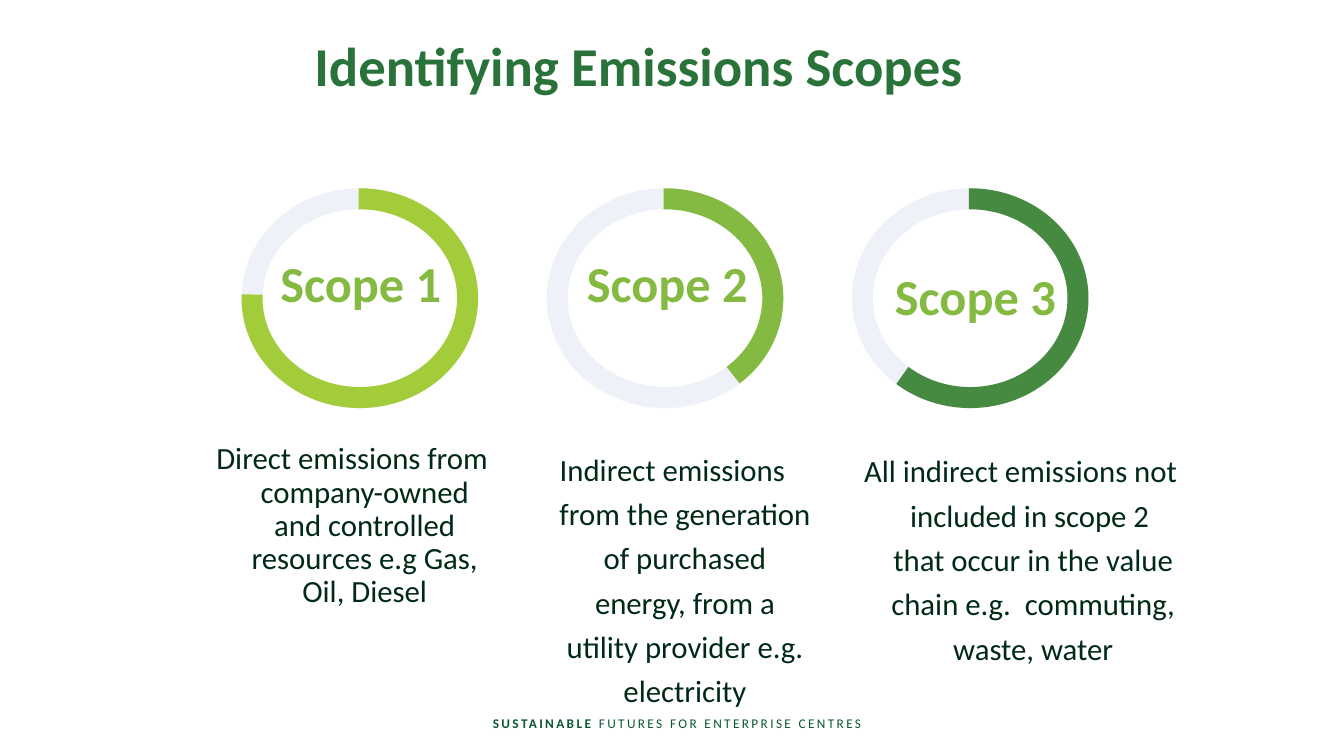
from dataclasses import dataclass

from pptx import Presentation
from pptx.dml.color import RGBColor
from pptx.enum.shapes import MSO_SHAPE
from pptx.enum.text import MSO_ANCHOR, PP_ALIGN
from pptx.shapes.autoshape import Shape
from pptx.slide import Slide
from pptx.util import Pt

WHITE = RGBColor(0xFF, 0xFF, 0xFF)
TRACK = RGBColor(0xEF, 0xF1, 0xF8)
LIME = RGBColor(0xA2, 0xCC, 0x3A)
LEAF = RGBColor(0x84, 0xBA, 0x41)
FOREST = RGBColor(0x46, 0x89, 0x40)
TITLE_GREEN = RGBColor(0x29, 0x72, 0x39)
FOOTER_GREEN = RGBColor(0x0B, 0x58, 0x2E)
INK = RGBColor(0x00, 0x2A, 0x16)

FONT = "Calibri"
RING_LEFT, RING_TOP, RING_PITCH = 180, 142, 218
RING_WIDTH, RING_HEIGHT, RING_LINE = 154, 142, 15
ARC_START = 269.26
ADJUSTMENT_PER_DEGREE = 0.6
HANGING = 18


@dataclass(frozen=True)
class Box:
    left: float
    top: float
    width: float
    height: float


@dataclass(frozen=True)
class TextStyle:
    size: float
    color: RGBColor
    bold: bool = False
    spacing: float = 1.0
    align: PP_ALIGN = PP_ALIGN.CENTER
    hanging: float = 0


@dataclass(frozen=True)
class Scope:
    name: str
    name_box: Box
    name_spacing: float
    detail: str
    detail_box: Box
    detail_spacing: float
    color: RGBColor
    arc_end: float


SCOPES = [
    Scope("Scope 1", Box(175, 181.5, 165.5, 97), 0.9,
          "Direct emissions from company-owned and controlled resources e.g Gas, Oil, Diesel",
          Box(142.5, 313, 218, 212), 0.9, LIME, 181.94),
    Scope("Scope 2", Box(394, 181.5, 165.5, 97), 0.9,
          "Indirect emissions from the generation of purchased energy, from a utility provider e.g. electricity",
          Box(373, 313, 214.5, 185), 1.2, LEAF, 48.5),
    Scope("Scope 3", Box(614, 181.5, 165.5, 97), 1.1,
          "All indirect emissions not included in scope 2  that occur in the value chain e.g.  commuting, waste, water",
          Box(608.5, 314, 241, 165), 1.2, FOREST, 131.28),
]


def add_text(s: Slide, box: Box, text: str, style: TextStyle) -> Shape:
    sp = s.shapes.add_textbox(Pt(box.left), Pt(box.top), Pt(box.width), Pt(box.height))
    tf = sp.text_frame
    tf.word_wrap = True
    p = tf.paragraphs[0]
    p.text = text
    p.alignment = style.align
    p.line_spacing = style.spacing
    if style.hanging:
        pPr = p._p.get_or_add_pPr()
        pPr.set("marL", str(Pt(style.hanging)))
        pPr.set("indent", str(-Pt(style.hanging)))
    for r in p.runs:
        r.font.name = FONT
        r.font.size = Pt(style.size)
        r.font.bold = style.bold
        r.font.color.rgb = style.color
    return sp


def add_ring_part(s: Slide, kind: MSO_SHAPE, column: int, color: RGBColor) -> Shape:
    sp = s.shapes.add_shape(kind, Pt(RING_LEFT + column * RING_PITCH), Pt(RING_TOP),
                            Pt(RING_WIDTH), Pt(RING_HEIGHT))
    sp.shadow.inherit = False
    sp.line.color.rgb = color
    sp.line.width = Pt(RING_LINE)
    return sp


def add_scope(s: Slide, column: int, scope: Scope) -> None:
    track = add_ring_part(s, MSO_SHAPE.OVAL, column, TRACK)
    track.fill.solid()
    track.fill.fore_color.rgb = WHITE
    arc = add_ring_part(s, MSO_SHAPE.ARC, column, scope.color)
    arc.fill.background()
    arc.adjustments[0] = ARC_START * ADJUSTMENT_PER_DEGREE
    arc.adjustments[1] = scope.arc_end * ADJUSTMENT_PER_DEGREE
    add_text(s, scope.name_box, scope.name,
             TextStyle(36, LEAF, True, scope.name_spacing, hanging=HANGING))
    add_text(s, scope.detail_box, scope.detail,
             TextStyle(22, INK, False, scope.detail_spacing, hanging=HANGING))


def add_footer(s: Slide) -> None:
    sp = add_text(s, Box(7.5, 502, 952.5, 29.5), "SUSTAINABLE",
                  TextStyle(9.5, FOOTER_GREEN, True))
    tf = sp.text_frame
    tf.vertical_anchor = MSO_ANCHOR.MIDDLE
    p = tf.paragraphs[0]
    r = p.add_run()
    r.text = " FUTURES FOR ENTERPRISE CENTRES"
    r.font.name = FONT
    r.font.size = Pt(9.5)
    r.font.color.rgb = FOOTER_GREEN
    for r in p.runs:
        r.font._element.set("spc", "170")


def main() -> None:
    prs = Presentation()
    prs.slide_width, prs.slide_height = Pt(960), Pt(540)
    s = prs.slides.add_slide(prs.slide_layouts[6])
    add_text(s, Box(217.5, 28, 720, 46), "Identifying Emissions Scopes",
             TextStyle(39.1, TITLE_GREEN, True, 0.8, PP_ALIGN.LEFT))
    for column, scope in enumerate(SCOPES):
        add_scope(s, column, scope)
    add_footer(s)
    prs.save("out.pptx")


if __name__ == "__main__":
    main()
